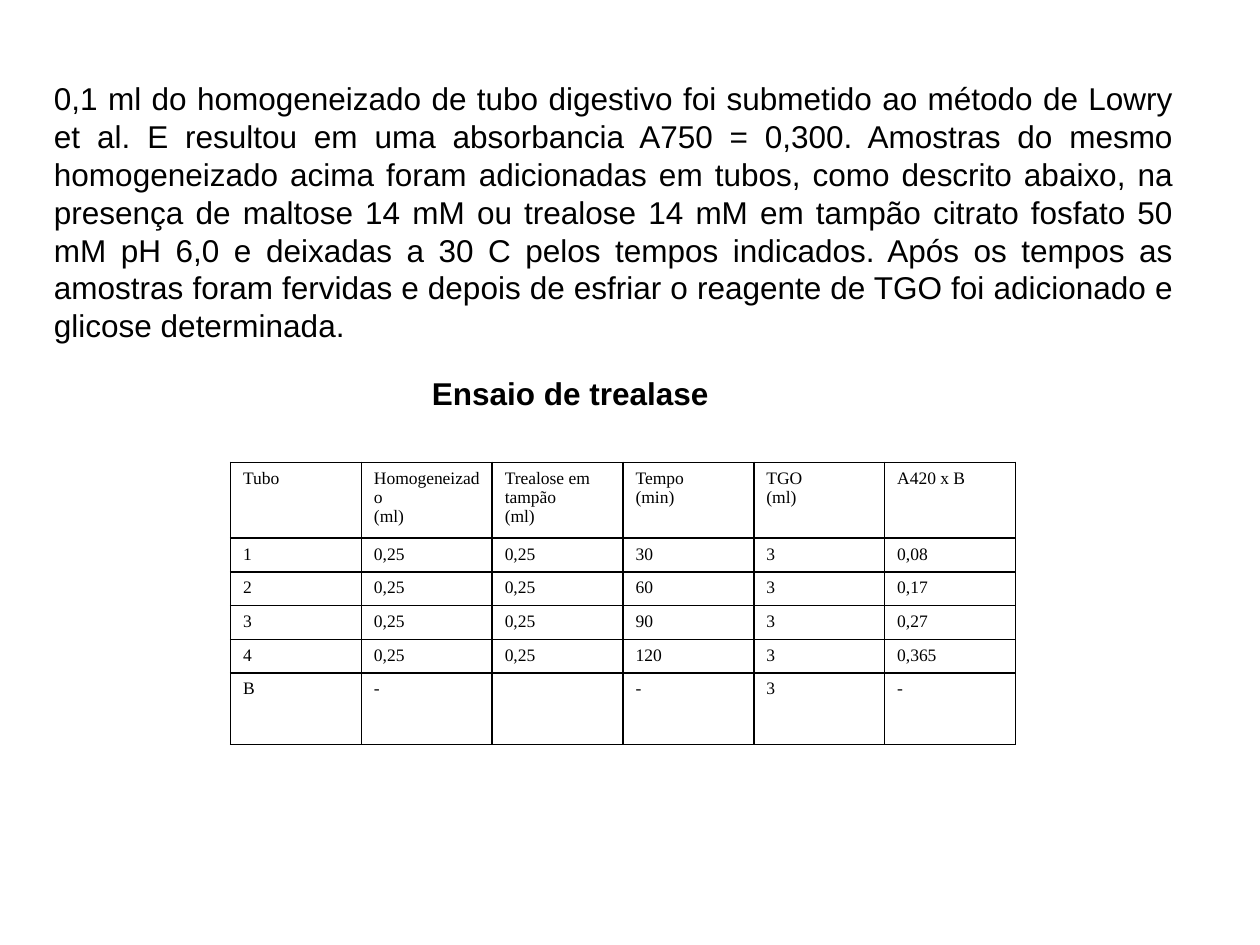
import pptx
import pptx.util
import pptx.dml.color
import pptx.enum.text
import pptx.oxml
import pptx.oxml.ns

COLS, ROWS = 100, 75
UNIT = pptx.util.Inches(10) / COLS
COLORS = {"ink": "000000", "paper": "FFFFFF"}
ALIGN = pptx.enum.text.PP_ALIGN
ANCHOR = pptx.enum.text.MSO_ANCHOR

INTRO = (
    "0,1 ml do homogeneizado de tubo digestivo foi submetido ao método de Lowry et al. "
    "E resultou em uma absorbancia A750 = 0,300. Amostras do mesmo homogeneizado acima "
    "foram adicionadas em tubos, como descrito abaixo, na presença de maltose 14 mM ou "
    "trealose 14 mM em tampão citrato fosfato 50 mM pH 6,0 e deixadas a 30 C pelos tempos "
    "indicados. Após os tempos as amostras foram fervidas e depois de esfriar o reagente "
    "de TGO foi adicionado e glicose determinada."
)
ASSAY = [
    ["Tubo", "Homogeneizado\n(ml)", "Trealose em tampão\n(ml)", "Tempo\n(min)", "TGO\n(ml)", "A420 x B"],
    ["1", "0,25", "0,25", "30", "3", "0,08"],
    ["2", "0,25", "0,25", "60", "3", "0,17"],
    ["3", "0,25", "0,25", "90", "3", "0,27"],
    ["4", "0,25", "0,25", "120", "3", "0,365"],
    ["B", "-", "", "-", "3", "-"],
]
ROW_HEIGHTS = [6, 2.68, 2.68, 2.68, 2.68, 5.68]


def grid(*values):
    return [pptx.util.Emu(round(v * UNIT)) for v in values]


def rgb(name):
    return pptx.dml.color.RGBColor.from_string(COLORS[name])


def write(tf, text, font="Arial", size=18, bold=False, color="ink", align=ALIGN.LEFT):
    for i, line in enumerate(text.split("\n")):
        p = tf.paragraphs[0] if i == 0 else tf.add_paragraph()
        p.alignment = align
        if not line:
            continue
        r = p.add_run()
        r.text = line
        r.font.name, r.font.size, r.font.bold = font, pptx.util.Pt(size), bold
        r.font.color.rgb = rgb(color)


def add_text(s, text, box, anchor, wrap=True, **style):
    tf = s.shapes.add_textbox(*grid(*box)).text_frame
    tf.word_wrap = wrap
    tf.vertical_anchor = anchor
    write(tf, text, **style)


def add_borders(cell, width=1, color="ink"):
    tc_pr = cell._tc.get_or_add_tcPr()
    for side in ("lnL", "lnR", "lnT", "lnB"):
        tc_pr.append(pptx.oxml.parse_xml(
            f'<a:{side} {pptx.oxml.ns.nsdecls("a")} w="{pptx.util.Pt(width)}"><a:solidFill>'
            f'<a:srgbClr val="{COLORS[color]}"/></a:solidFill></a:{side}>'))


def add_table(s, data, left, top, width, heights, **style):
    box = grid(left, top, width, sum(heights))
    table = s.shapes.add_table(len(data), len(data[0]), *box).table
    table.first_row = table.horz_banding = False
    for row, height in zip(table.rows, grid(*heights)):
        row.height = height
    for i, values in enumerate(data):
        for j, value in enumerate(values):
            cell = table.cell(i, j)
            add_borders(cell)
            cell.fill.solid()
            cell.fill.fore_color.rgb = rgb("paper")
            write(cell.text_frame, value, **style)


def main():
    prs = pptx.Presentation()
    prs.slide_width, prs.slide_height = grid(COLS, ROWS)
    s = prs.slides.add_slide(prs.slide_layouts[6])
    add_text(s, INTRO, (3.3, 5.8, 90.8, 22), ANCHOR.MIDDLE, align=ALIGN.JUSTIFY)
    add_table(s, ASSAY, 18.3, 36.7, 62.3, ROW_HEIGHTS, font="Times New Roman", size=10)
    add_text(s, "Ensaio de trealase", (33.3, 29.2, 24.7, 6.5), ANCHOR.TOP, wrap=False, bold=True)
    prs.save("out.pptx")


if __name__ == "__main__":
    main()
